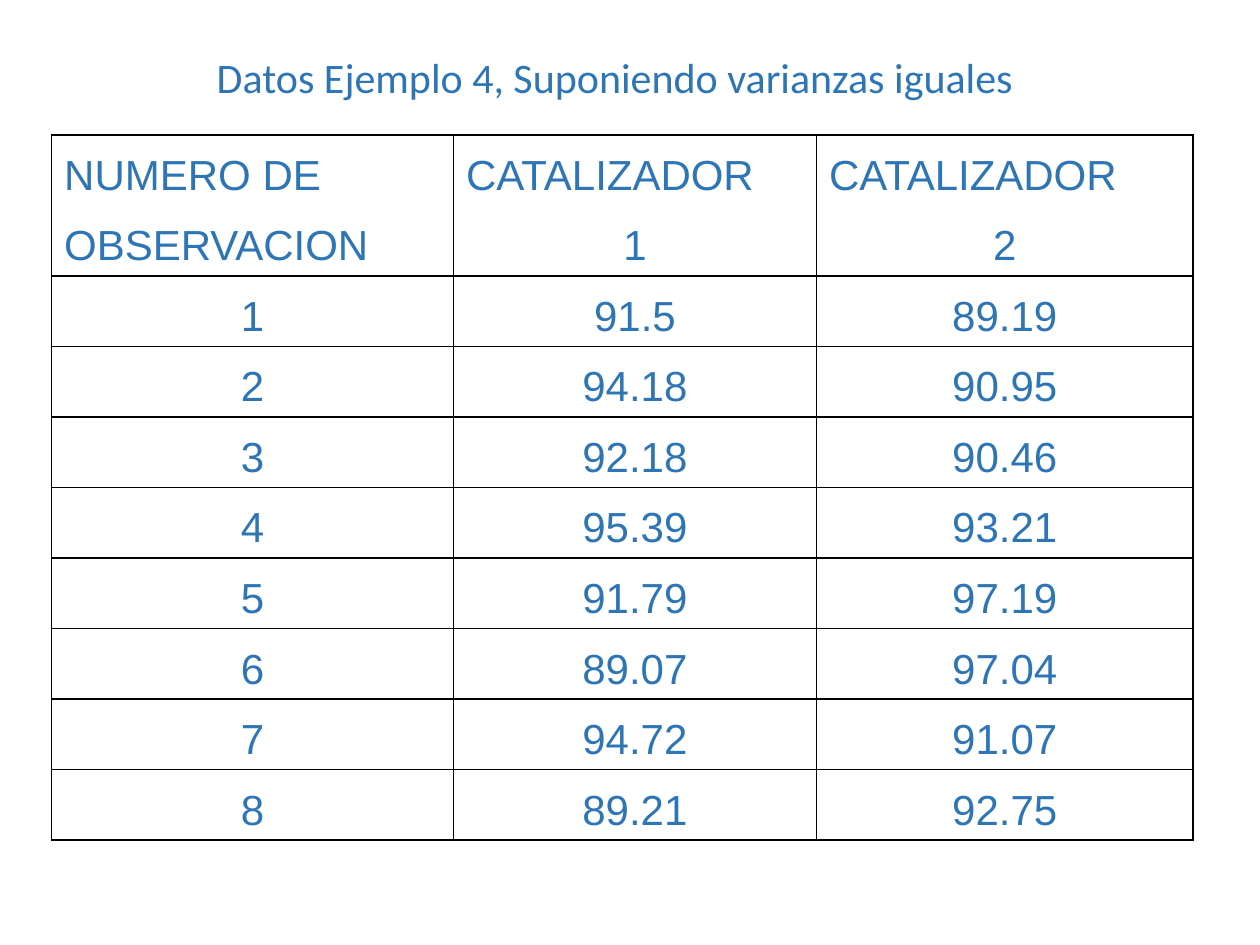
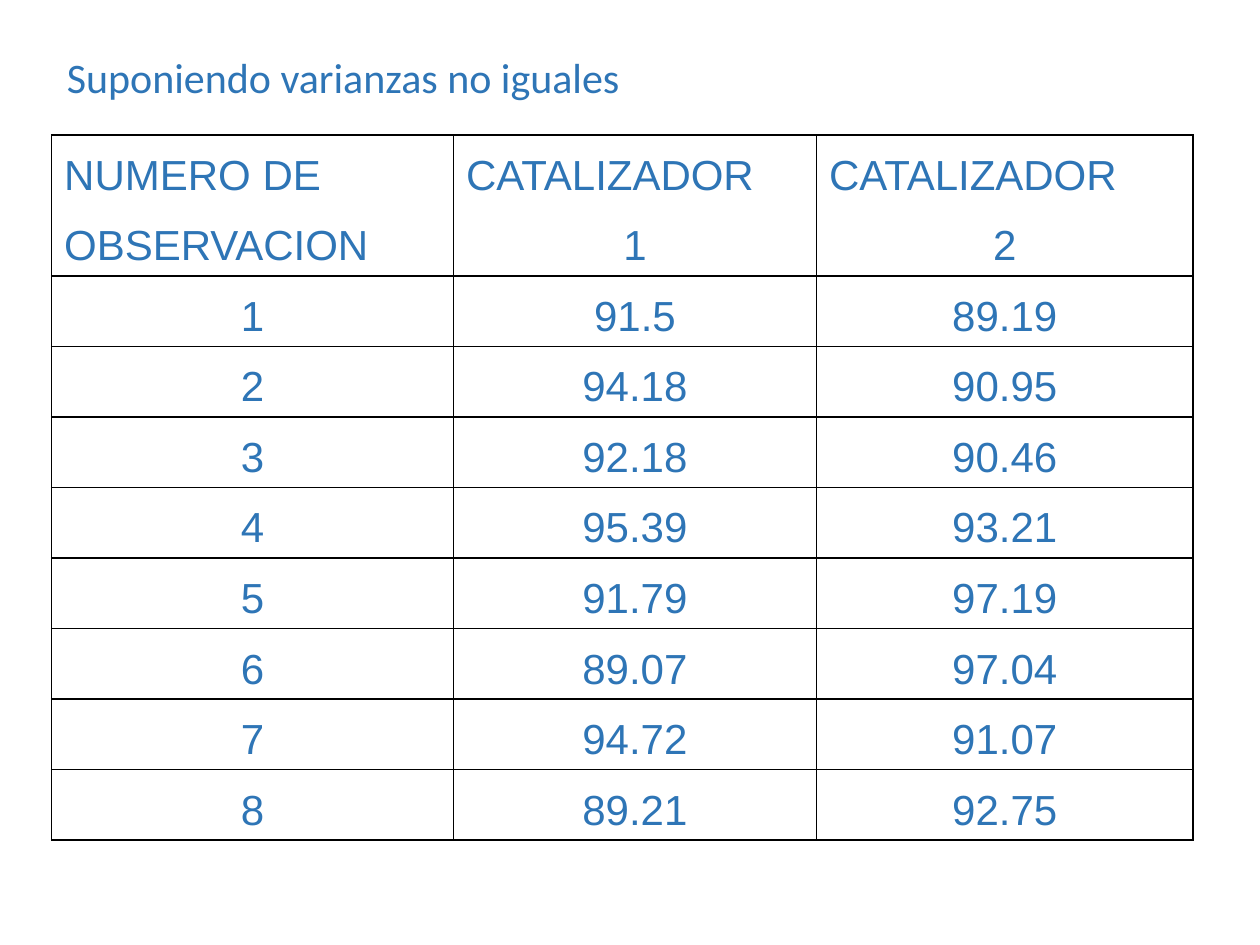
from dataclasses import dataclass

from lxml import etree
from pptx import Presentation
from pptx import util as u
from pptx.dml.color import RGBColor
from pptx.enum import text
from pptx.oxml import ns


@dataclass(frozen=True)
class Theme:
    ink: str = "2E75B6"
    rule: str = "000000"
    title_font: str = "Calibri"
    table_font: str = "Arial"
    size: int = 24
    rule_width: int = 1


HEADINGS = [
    ("NUMERO DE", "CATALIZADOR", "CATALIZADOR"),
    ("OBSERVACION", "1", "2"),
]
YIELDS = [
    ("91.5", "89.19"),
    ("94.18", "90.95"),
    ("92.18", "90.46"),
    ("95.39", "93.21"),
    ("91.79", "97.19"),
    ("89.07", "97.04"),
    ("94.72", "91.07"),
    ("89.21", "92.75"),
]
OBSERVATIONS = [(str(number), *pair) for number, pair in enumerate(YIELDS, 1)]
COLUMN_WIDTHS = (3.19, 2.88, 2.99)
ROW_HEIGHT = 0.56
LEFT, CENTER = text.PP_ALIGN.LEFT, text.PP_ALIGN.CENTER


class Deck:
    def __init__(self, theme):
        self.theme = theme
        self.presentation = Presentation()
        self.presentation.slide_width = u.Inches(10)
        self.presentation.slide_height = u.Inches(7.5)
        self.slide = None

    def add_slide(self):
        title_only = self.presentation.slide_layouts[5]
        self.slide = self.presentation.slides.add_slide(title_only)

    def add_words(self, paragraph, words, font, align):
        paragraph.alignment = align
        run = paragraph.add_run()
        run.text = words
        run.font.name = font
        run.font.size = u.Pt(self.theme.size)
        run.font.color.rgb = RGBColor.from_string(self.theme.ink)

    def title(self, words, align):
        heading = self.slide.shapes.title
        heading.left, heading.top = u.Inches(0.43), u.Inches(0.36)
        heading.width, heading.height = u.Inches(8.9), u.Inches(0.5)
        frame = heading.text_frame
        frame.word_wrap = True
        frame.auto_size = text.MSO_AUTO_SIZE.SHAPE_TO_FIT_TEXT
        frame.vertical_anchor = text.MSO_ANCHOR.TOP
        self.add_words(frame.paragraphs[0], words, self.theme.title_font, align)

    def borders(self, cell, hidden):
        properties = cell._tc.get_or_add_tcPr()
        for side in "LRTB":
            line = etree.SubElement(properties, ns.qn(f"a:ln{side}"),
                                    w=str(u.Pt(self.theme.rule_width)))
            if side == hidden:
                etree.SubElement(line, ns.qn("a:noFill"))
            else:
                paint = etree.SubElement(line, ns.qn("a:solidFill"))
                etree.SubElement(paint, ns.qn("a:srgbClr"), val=self.theme.rule)

    def table(self, rows):
        grid = self.slide.shapes.add_table(
            len(rows), len(COLUMN_WIDTHS), u.Inches(0.41), u.Inches(1.07),
            u.Inches(sum(COLUMN_WIDTHS)), u.Inches(ROW_HEIGHT * len(rows))).table
        grid.first_row = grid.horz_banding = False
        for column, width in zip(grid.columns, COLUMN_WIDTHS):
            column.width = u.Inches(width)
        open_sides = {0: "B", 1: "T"}
        for index, values in enumerate(rows):
            grid.rows[index].height = u.Inches(ROW_HEIGHT)
            for cell, value in zip(grid.rows[index].cells, values):
                self.borders(cell, open_sides.get(index))
                cell.fill.background()
                cell.vertical_anchor = text.MSO_ANCHOR.BOTTOM
                align = CENTER if value[0].isdigit() else LEFT
                self.add_words(cell.text_frame.paragraphs[0], value,
                               self.theme.table_font, align)


def main():
    deck = Deck(Theme())
    for words, align in (
        ("Datos Ejemplo 4, Suponiendo varianzas iguales", CENTER),
        ("Suponiendo varianzas no iguales", LEFT),
    ):
        deck.add_slide()
        deck.title(words, align)
        deck.table(HEADINGS + OBSERVATIONS)
    deck.presentation.save("out.pptx")


if __name__ == "__main__":
    main()
